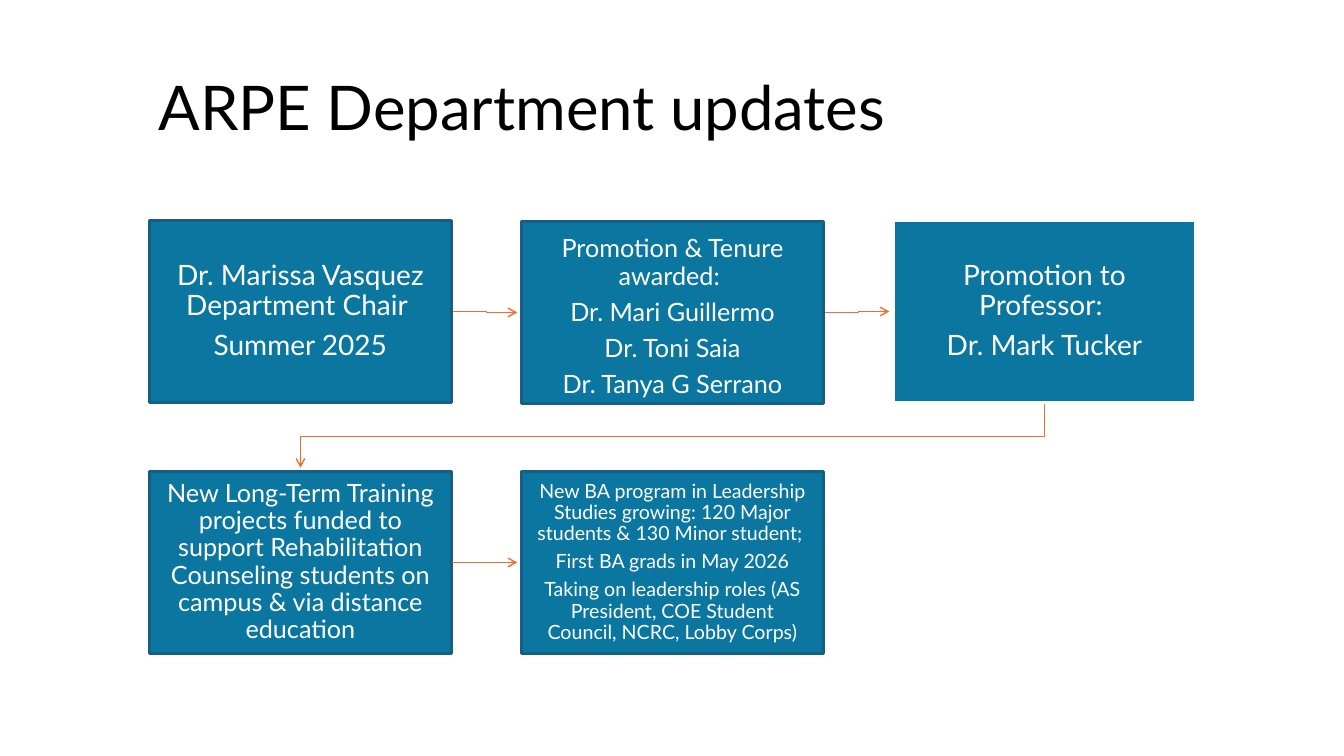
from lxml.etree import SubElement
from pptx import Presentation
from pptx.dml.color import RGBColor
from pptx.enum.shapes import MSO_CONNECTOR, MSO_SHAPE
from pptx.enum.text import MSO_ANCHOR, MSO_AUTO_SIZE, PP_ALIGN
from pptx.oxml.ns import qn
from pptx.util import Inches, Pt

FONT = "Lato"
BLUE, EDGE, ORANGE, WHITE, BLACK = "0B76A0", "156082", "E97132", "FFFFFF", "000000"
WIDE, HIGH = 3, 1.8
LEFT, STEP = 1.48, 3.69
TOP, LOW = 2.19, 4.68
SPAN = 0.65  # length of an arrow between boxes

# Column, top, edge colour, text size, top and bottom inset, lines
BOXES = [
    (0, TOP, EDGE, 20, 0.15, 0.15,
     ["Dr. Marissa Vasquez Department Chair ", "Summer 2025"]),
    (1, TOP + 0.01, EDGE, 18, 0.13, 0.03,
     ["Promotion & Tenure awarded: ", "Dr. Mari Guillermo",
      "Dr. Toni Saia", "Dr. Tanya G Serrano"]),
    (2, TOP, WHITE, 20, 0.15, 0.15,
     ["Promotion to Professor: ", "Dr. Mark Tucker"]),
    (0, LOW, EDGE, 18, 0.15, 0.15,
     ["New Long-Term Training projects funded to support Rehabilitation "
      "Counseling students on campus & via distance education"]),
    (1, LOW, EDGE, 14, 0.15, 0.15,
     ["New BA program in Leadership Studies growing: 120 Major students "
      "& 130 Minor student; ",
      "First BA grads in May 2026",
      "Taking on leadership roles (AS President, COE Student Council, "
      "NCRC, Lobby Corps)"]),
]


def color(code):
    return RGBColor.from_string(code)


def add_run(para, text, size, code):
    run = para.add_run()
    run.text = text
    run.font.name = FONT
    run.font.size = Pt(size)
    run.font.color.rgb = color(code)


def add_title(slide, text):
    title = slide.shapes.title
    title.left, title.top = Inches(1.47), Inches(0.29)
    title.width, title.height = Inches(10.4), Inches(1.19)
    frame = title.text_frame
    frame.auto_size = MSO_AUTO_SIZE.NONE
    frame.vertical_anchor = MSO_ANCHOR.BOTTOM
    para = frame.paragraphs[0]
    para.alignment = PP_ALIGN.LEFT
    para.line_spacing = 0.9
    add_run(para, text, 44, BLACK)


def add_box(slide, col, top, edge, size, above, below, lines):
    box = slide.shapes.add_shape(
        MSO_SHAPE.RECTANGLE, Inches(LEFT + col * STEP), Inches(top),
        Inches(WIDE), Inches(HIGH))
    box.shadow.inherit = False
    box.fill.solid()
    box.fill.fore_color.rgb = color(BLUE)
    box.line.color.rgb = color(edge)
    box.line.width = Pt(2)
    frame = box.text_frame
    frame.word_wrap = True
    frame.vertical_anchor = MSO_ANCHOR.MIDDLE
    frame.margin_left = frame.margin_right = Inches(0.15)
    frame.margin_top, frame.margin_bottom = Inches(above), Inches(below)
    for i, text in enumerate(lines):
        para = frame.add_paragraph() if i else frame.paragraphs[0]
        para.alignment = PP_ALIGN.CENTER
        para.line_spacing = 0.9
        if i < len(lines) - 1:
            para.space_after = Pt(0.35 * size)
        add_run(para, text, size, WHITE)
    return box


def style_arrow(arrow):
    arrow.line.color.rgb = color(ORANGE)
    arrow.line.width = Pt(1)
    SubElement(arrow.line._get_or_add_ln(), qn("a:tailEnd"), type="arrow")


def add_bend(slide, points):
    spots = [(Inches(x), Inches(y)) for x, y in points]
    path = slide.shapes.build_freeform(*spots[0])
    path.add_line_segments(spots[1:], close=False)
    bend = path.convert_to_shape()
    bend.shadow.inherit = False
    bend.fill.background()
    style_arrow(bend)


def add_arrow(slide, box, length):
    x, y = box.left + box.width, box.top + box.height // 2
    arrow = slide.shapes.add_connector(
        MSO_CONNECTOR.STRAIGHT, x, y, x + Inches(length), y)
    arrow.begin_connect(box, 3)
    style_arrow(arrow)
    SubElement(arrow._element.spPr, qn("a:effectLst"))


def main():
    deck = Presentation()
    deck.slide_width, deck.slide_height = Inches(13.33), Inches(7.5)
    slide = deck.slides.add_slide(deck.slide_layouts[5])
    add_title(slide, "ARPE Department updates")

    # Stepped arrows along the top row
    mid = TOP + HIGH / 2
    for col, start, end in [(0, mid, mid + 0.01), (1, mid + 0.01, mid)]:
        x = LEFT + col * STEP + WIDE
        turn = x + SPAN / 2 + 0.02
        add_bend(slide, [(x, start), (turn, start), (turn, end), (x + SPAN, end)])

    # Arrow from the top row back to the lower row
    first, last = LEFT + WIDE / 2, LEFT + 2 * STEP + WIDE / 2
    add_bend(slide, [(last, 3.98), (last, 4.33), (first, 4.33), (first, 4.64)])

    # Boxes and the straight arrow in the lower row
    boxes = [add_box(slide, *row) for row in BOXES]
    add_arrow(slide, boxes[3], SPAN)
    deck.save("out.pptx")


if __name__ == "__main__":
    main()
